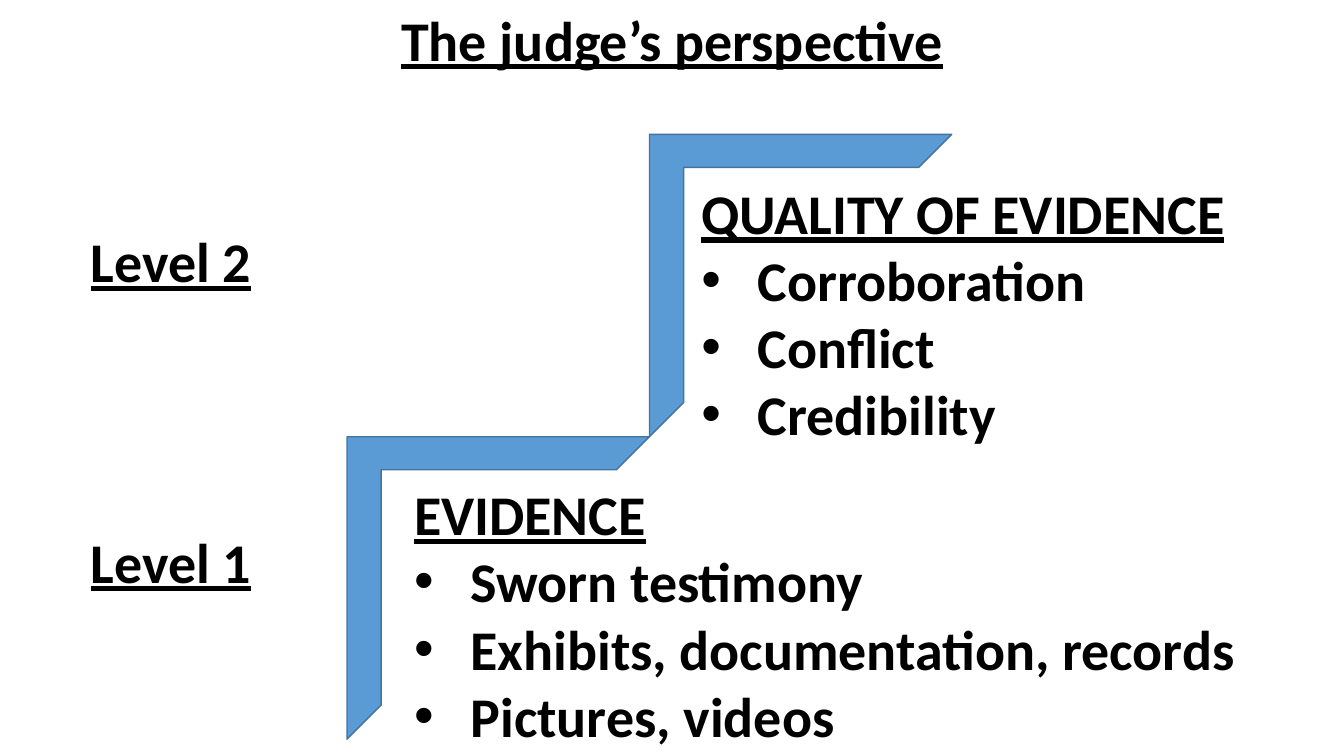
from lxml.etree import SubElement
from pptx import Presentation
from pptx.dml.color import RGBColor
from pptx.enum.shapes import MSO_SHAPE
from pptx.enum.text import MSO_ANCHOR, MSO_AUTO_SIZE, PP_ALIGN
from pptx.oxml.ns import qn
from pptx.util import Inches, Pt

COLOURS = {"text": "000000", "step": "5B9BD5", "edge": "43739E"}
COLUMNS, ROWS = 40, 22.5
STEP_SIZE = 9
LEVELS = [
    {
        "label": "Level 1",
        "label_row": 15.54,
        "heading": "EVIDENCE",
        "points": ["Sworn testimony", "Exhibits, documentation, records", "Pictures, videos"],
        "area": (12.03, 14.13, 26.88, 8.37),
    },
    {
        "label": "Level 2",
        "label_row": 6.6,
        "heading": "QUALITY OF EVIDENCE",
        "points": ["Corroboration", "Conflict", "Credibility"],
        "area": (20.58, 5.16, 19.41, 8.37),
    },
]


class StaircaseSlide:
    """Draws titles, steps, labels and lists on a grid of columns and rows."""

    def __init__(self, deck):
        self.column = deck.slide_width / COLUMNS
        self.row = deck.slide_height / ROWS
        self.font_format = {"name": "Calibri", "size": Pt(40), "bold": True}
        self.frame_format = {
            "word_wrap": True,
            "auto_size": MSO_AUTO_SIZE.SHAPE_TO_FIT_TEXT,
            "vertical_anchor": MSO_ANCHOR.TOP,
            "margin_left": Inches(0.1),
            "margin_right": Inches(0.1),
            "margin_top": Inches(0.05),
            "margin_bottom": Inches(0.05),
        }
        self.slide = deck.slides.add_slide(deck.slide_layouts[5])

    def place(self, left, top, width, height):
        return (
            round(left * self.column),
            round(top * self.row),
            round(width * self.column),
            round(height * self.row),
        )

    def apply(self, target, formats):
        for attribute, value in formats.items():
            setattr(target, attribute, value)

    def add_words(self, paragraph, words, underline=False):
        run = paragraph.add_run()
        run.text = words
        self.apply(run.font, {**self.font_format, "underline": underline})
        run.font.color.rgb = RGBColor.from_string(COLOURS["text"])

    def text_area(self, area):
        frame = self.slide.shapes.add_textbox(*self.place(*area)).text_frame
        self.apply(frame, self.frame_format)
        return frame

    def title(self, words, area):
        heading = self.slide.shapes.title
        position = zip(("left", "top", "width", "height"), self.place(*area))
        self.apply(heading, dict(position))
        self.apply(heading.text_frame, self.frame_format)
        paragraph = heading.text_frame.paragraphs[0]
        paragraph.alignment = PP_ALIGN.CENTER
        self.add_words(paragraph, words, underline=True)

    def label(self, words, area):
        paragraph = self.text_area(area).paragraphs[0]
        paragraph.alignment = PP_ALIGN.CENTER
        self.add_words(paragraph, words, underline=True)

    def bullet(self, paragraph):
        properties = paragraph._p.get_or_add_pPr()
        indent = Inches(0.56)
        properties.set("marL", str(indent))
        properties.set("indent", str(-indent))
        SubElement(properties, qn("a:buFont"), typeface="Arial")
        SubElement(properties, qn("a:buChar"), char="•")

    def bullet_list(self, heading, points, area):
        frame = self.text_area(area)
        self.add_words(frame.paragraphs[0], heading, underline=True)
        for point in points:
            paragraph = frame.add_paragraph()
            self.bullet(paragraph)
            self.add_words(paragraph, point)

    def step(self, left, top):
        area = self.place(left, top, STEP_SIZE, STEP_SIZE)
        stair = self.slide.shapes.add_shape(MSO_SHAPE.HALF_FRAME, *area)
        stair.shadow.inherit = False
        stair.adjustments[0] = 0.109
        stair.adjustments[1] = 0.113
        stair.fill.solid()
        stair.fill.fore_color.rgb = RGBColor.from_string(COLOURS["step"])
        stair.line.color.rgb = RGBColor.from_string(COLOURS["edge"])
        stair.line.width = Pt(1)


def main():
    deck = Presentation()
    deck.slide_width, deck.slide_height = Inches(13.33), Inches(7.5)
    staircase = StaircaseSlide(deck)
    staircase.title("The judge’s perspective", (5, 0, 30, 2.31))
    for index, level in enumerate(LEVELS):
        rise = index * STEP_SIZE
        staircase.step(10.33 + rise, 13 - rise)
        staircase.bullet_list(level["heading"], level["points"], level["area"])
        staircase.label(level["label"], (2.04, level["label_row"], 6.09, 2.31))
    deck.save("out.pptx")


if __name__ == "__main__":
    main()
